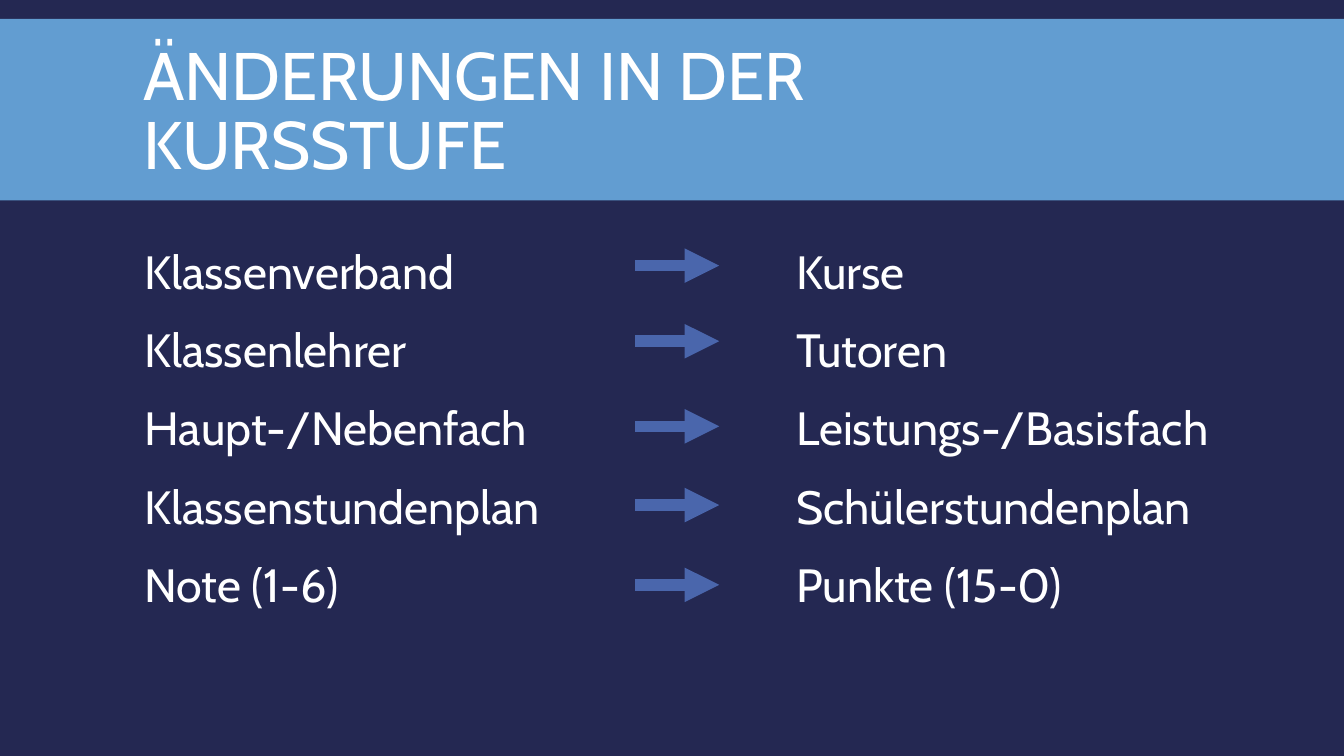
from dataclasses import dataclass

from lxml.etree import SubElement
from pptx import Presentation
from pptx.dml.color import RGBColor
from pptx.enum.shapes import MSO_CONNECTOR as Connector, MSO_SHAPE as Shape
from pptx.enum.text import MSO_ANCHOR as Anchor
from pptx.oxml.ns import qn
from pptx.util import Pt

EMU_PER_PX = 9525


@dataclass(frozen=True)
class Theme:
    background: RGBColor = RGBColor(0x24, 0x28, 0x52)
    band: RGBColor = RGBColor(0x62, 0x9D, 0xD1)
    arrow: RGBColor = RGBColor(0x4A, 0x66, 0xAC)
    text: RGBColor = RGBColor(0xFF, 0xFF, 0xFF)
    font: str = "Cabin"
    title_size: float = 48
    body_size: float = 33.3
    arrow_width: float = 8.25


THEME = Theme()
TITLE = "ÄNDERUNGEN IN DER KURSSTUFE"
CHANGES = [
    ("Klassenverband", "Kurse", 253),
    ("Klassenlehrer", "Tutoren", 325),
    ("Haupt-/Nebenfach", "Leistungs-/Basisfach", 406),
    ("Klassenstundenplan", "Schülerstundenplan", 481),
    ("Note (1-6)", "Punkte (15-0)", 557),
]


def px(*lengths):
    return [length * EMU_PER_PX for length in lengths]


def add_band(slide, box):
    shape = slide.shapes.add_shape(Shape.RECTANGLE, *px(*box))
    shape.shadow.inherit = False
    shape.fill.solid()
    shape.fill.fore_color.rgb = THEME.band
    shape.line.fill.background()


def add_text(slide, box, lines, size, line_spacing, gap=0, anchor=Anchor.TOP):
    frame = slide.shapes.add_textbox(*px(*box)).text_frame
    frame.word_wrap = True
    frame.vertical_anchor = anchor
    frame.text = "\n".join(lines)
    for index, paragraph in enumerate(frame.paragraphs):
        paragraph.line_spacing = line_spacing
        paragraph.space_before = Pt(gap if index else 0)
        paragraph.space_after = Pt(gap)
        paragraph.font.name = THEME.font
        paragraph.font.size = Pt(size)
        paragraph.font.color.rgb = THEME.text


def add_arrow(slide, left, right, y):
    arrow = slide.shapes.add_connector(Connector.STRAIGHT, *px(left, y, right, y))
    arrow.line.color.rgb = THEME.arrow
    arrow.line.width = Pt(THEME.arrow_width)
    SubElement(arrow.line._get_or_add_ln(), qn("a:tailEnd"), type="triangle")
    SubElement(arrow._element.spPr, qn("a:effectLst"))


def main():
    presentation = Presentation()
    presentation.slide_width, presentation.slide_height = px(1280, 720)
    slide = presentation.slides.add_slide(presentation.slide_layouts[6])
    slide.background.fill.solid()
    slide.background.fill.fore_color.rgb = THEME.background

    add_band(slide, (0, 18, 1280, 173))
    add_text(slide, (127, 30, 935, 158), [TITLE], THEME.title_size, 0.85,
             anchor=Anchor.MIDDLE)

    before, after, arrow_heights = zip(*CHANGES)
    for left, lines in ((128, before), (749, after)):
        add_text(slide, (left, 221, 445, 442), lines, THEME.body_size, 1.1, gap=6)
    for y in arrow_heights:
        add_arrow(slide, 605, 685, y)

    presentation.save("out.pptx")


if __name__ == "__main__":
    main()
